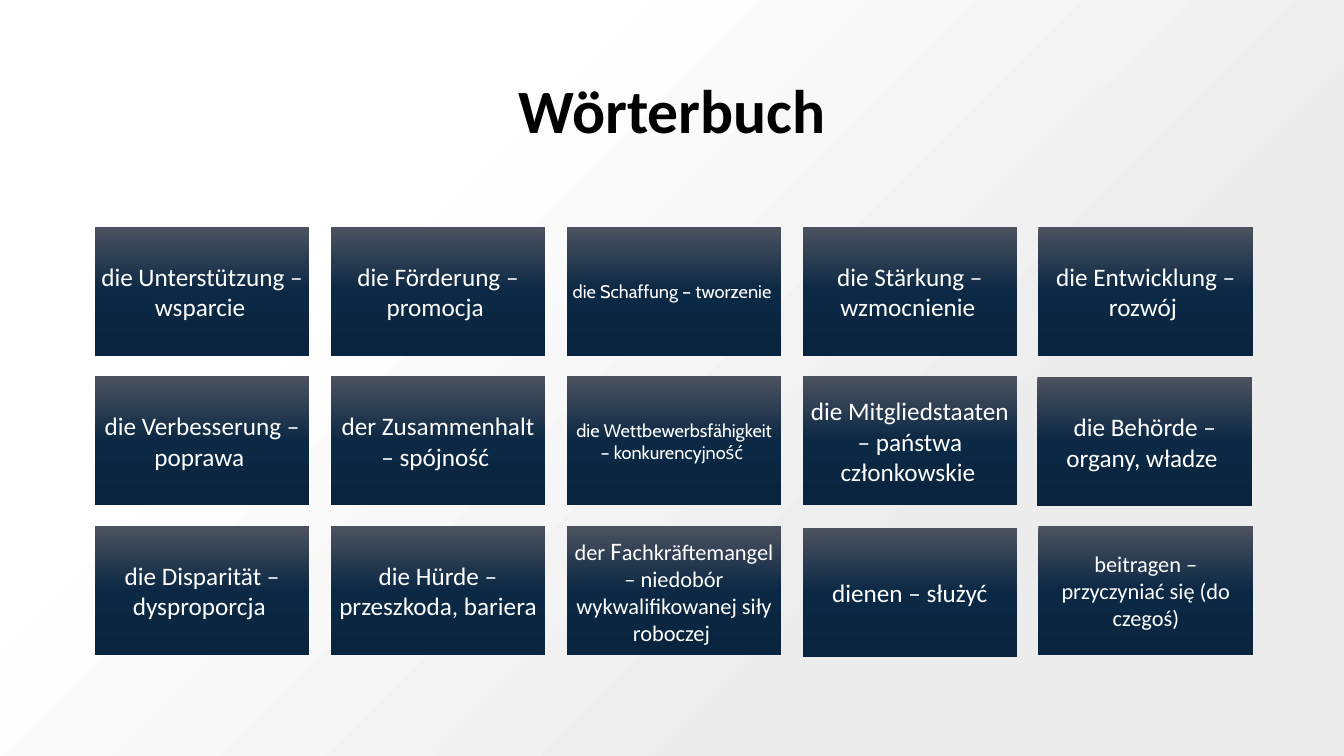
from copy import deepcopy

from lxml import etree
from pptx import Presentation
from pptx.dml.color import RGBColor
from pptx.enum.shapes import MSO_SHAPE
from pptx.enum.text import MSO_ANCHOR, PP_ALIGN
from pptx.oxml.ns import qn
from pptx.util import Inches, Pt

RECTANGLE = MSO_SHAPE.RECTANGLE
MIDDLE = MSO_ANCHOR.MIDDLE
CENTER = PP_ALIGN.CENTER

BLACK = RGBColor(0x00, 0x00, 0x00)
WHITE = RGBColor(0xFF, 0xFF, 0xFF)
PALE_GREY = RGBColor(0xEC, 0xEC, 0xEC)
SLATE = RGBColor(0x4C, 0x52, 0x5F)
NAVY = RGBColor(0x0B, 0x28, 0x44)
DARK_NAVY = RGBColor(0x08, 0x24, 0x3E)

LARGE = ("Calibri", 18)
MEDIUM = ("Calibri", 16)
SMALL = ("Cabin", 13)
SPACE = (" ", SMALL)

WIDE_INSET = 0.07
NARROW_INSET = 0.05
COLUMNS = 5
CARD_WIDTH, CARD_HEIGHT = 2.13, 1.28
COLUMN_STEP, ROW_STEP = 2.34, 1.485

VOCABULARY = [
    ([("die Unterstützung – wsparcie", LARGE), SPACE], NARROW_INSET),
    ([("die Förderung – promocja ", LARGE)], WIDE_INSET),
    ([("die Schaffung – tworzenie ", SMALL)], NARROW_INSET),
    ([("die Stärkung – wzmocnienie", LARGE), SPACE], WIDE_INSET),
    ([("die Entwicklung – rozwój ", LARGE)], WIDE_INSET),
    ([("die Verbesserung – poprawa ", LARGE)], WIDE_INSET),
    ([("der Zusammenhalt – spójność ", LARGE)], WIDE_INSET),
    ([("die Wettbewerbsfähigkeit – konkurencyjność ", SMALL)], NARROW_INSET),
    ([("die Mitgliedstaaten – państwa członkowskie", LARGE), SPACE], WIDE_INSET),
    ([("die Behörde – organy, władze ", LARGE)], WIDE_INSET),
    ([("die Disparität – dysproporcja ", LARGE)], WIDE_INSET),
    ([("die Hürde – przeszkoda, bariera", LARGE)], WIDE_INSET),
    ([("der ", MEDIUM), ("F", LARGE),
      ("achkräftemangel – niedobór wykwalifikowanej siły roboczej ", MEDIUM)], WIDE_INSET),
    ([("dienen – służyć", LARGE)], WIDE_INSET),
    ([("beitragen – przyczyniać się (do czegoś)", MEDIUM)], WIDE_INSET),
]
NUDGES = {9: (-0.01, 0.01), 13: (0, 0.02)}


def add_gradient_box(slide, left, top, width, height, stops):
    shape = slide.shapes.add_shape(
        RECTANGLE, Inches(left), Inches(top), Inches(width), Inches(height))
    shape.shadow.inherit = False
    shape.line.fill.background()
    shape.fill.gradient()
    shape.fill.gradient_angle = 270
    stop_list = shape.element.spPr.find(qn("a:gradFill")).find(qn("a:gsLst"))
    for _ in stops[2:]:
        stop_list.append(deepcopy(stop_list[-1]))
    for stop, (position, color) in zip(shape.fill.gradient_stops, stops):
        stop.position = position
        stop.color.rgb = color
    return shape


def add_text_run(paragraph, text, font_name, size, color, bold=False):
    run = paragraph.add_run()
    run.text = text
    run.font.name = font_name
    run.font.size = Pt(size)
    run.font.color.rgb = color
    run.font.bold = bold


def add_backdrop(slide, left, top, width, height):
    backdrop = add_gradient_box(slide, left, top, width, height,
                                [(0.28, PALE_GREY), (0.74, WHITE)])
    gradient = backdrop.element.spPr.find(qn("a:gradFill"))
    gradient.remove(gradient.find(qn("a:lin")))
    radial = etree.Element(qn("a:path"), path="circle")
    etree.SubElement(radial, qn("a:fillToRect"), l="100000", t="100000")
    gradient.find(qn("a:gsLst")).addnext(radial)
    slide.shapes.title.element.addprevious(backdrop.element)


def add_title(slide, left, top, width, height):
    title = slide.shapes.title
    title.left, title.top = Inches(left), Inches(top)
    title.width, title.height = Inches(width), Inches(height)
    title.text_frame.vertical_anchor = MIDDLE
    paragraph = title.text_frame.paragraphs[0]
    paragraph.alignment = CENTER
    paragraph.line_spacing = 0.9
    add_text_run(paragraph, "Wörterbuch", "Calibri", 44, BLACK, bold=True)


def add_card(slide, left, top, runs, inset):
    card = add_gradient_box(slide, left, top, CARD_WIDTH, CARD_HEIGHT,
                            [(0, SLATE), (0.5, NAVY), (1, DARK_NAVY)])
    frame = card.text_frame
    frame.word_wrap = True
    frame.vertical_anchor = MIDDLE
    frame.margin_left = frame.margin_right = Inches(inset)
    frame.margin_top = frame.margin_bottom = Inches(inset)
    paragraph = frame.paragraphs[0]
    paragraph.alignment = CENTER
    for text, (font_name, size) in runs:
        add_text_run(paragraph, text, font_name, size, WHITE)


def add_vocabulary(slide, left, top):
    for index, (runs, inset) in enumerate(VOCABULARY):
        row, column = divmod(index, COLUMNS)
        shift_x, shift_y = NUDGES.get(index, (0, 0))
        add_card(slide, left + column * COLUMN_STEP + shift_x,
                 top + row * ROW_STEP + shift_y, runs, inset)


def main():
    presentation = Presentation()
    presentation.slide_width = Inches(13.33)
    presentation.slide_height = Inches(7.5)
    slide = presentation.slides.add_slide(presentation.slide_layouts[5])
    add_backdrop(slide, 0, 0, 13.33, 7.5)
    add_title(slide, 0.92, 0.4, 11.5, 1.45)
    add_vocabulary(slide, 0.94, 2.25)
    presentation.save("out.pptx")


if __name__ == "__main__":
    main()
